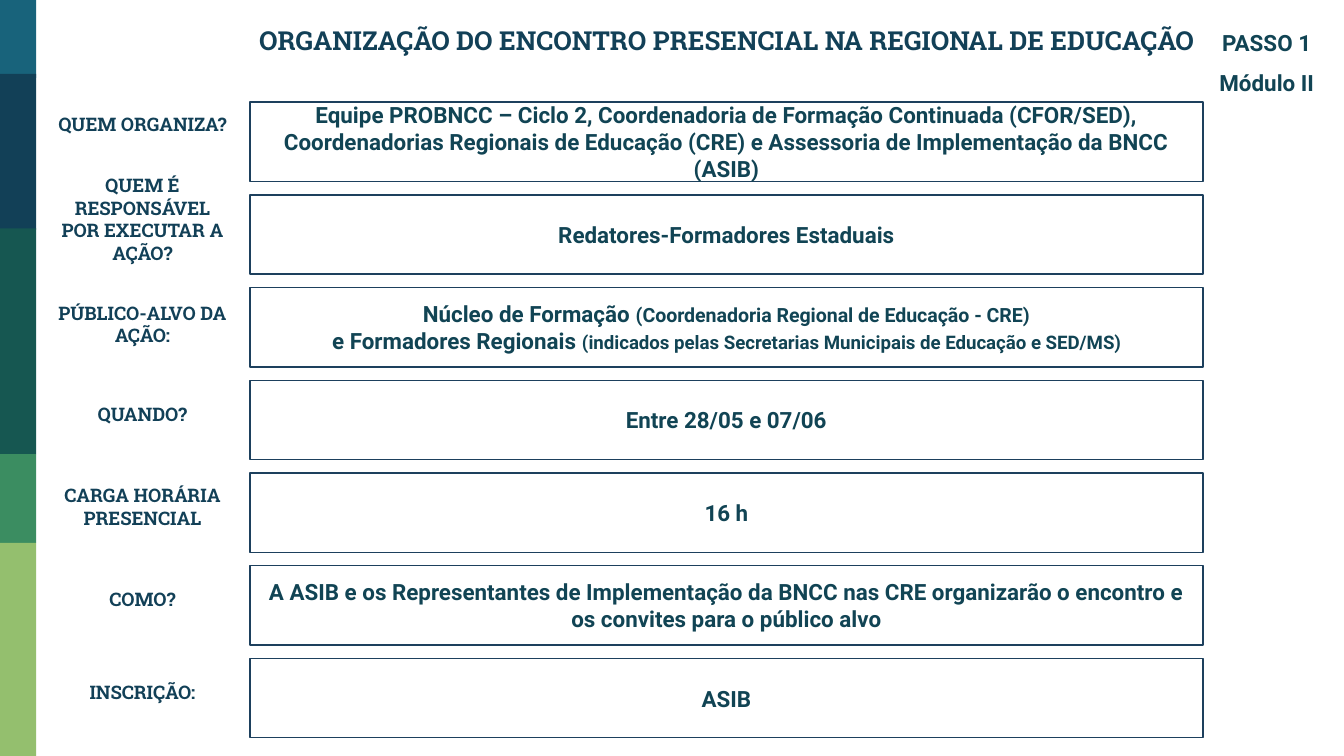
from pptx import Presentation
from pptx.dml.color import RGBColor
from pptx.enum.shapes import MSO_SHAPE
from pptx.enum.text import MSO_ANCHOR, PP_ALIGN
from pptx.util import Inches, Pt

NAVY = RGBColor(0x12, 0x40, 0x57)
TEAL = RGBColor(0x11, 0x44, 0x54)
BORDER = RGBColor(0x1D, 0x40, 0x5D)
BLUE = RGBColor(0x18, 0x63, 0x7B)
PINE = RGBColor(0x16, 0x57, 0x51)
GREEN = RGBColor(0x3B, 0x8D, 0x61)
LIME = RGBColor(0x94, 0xBF, 0x6E)

HEADING_FONT = "Roboto Slab"
BODY_FONT = "Roboto"

SIDEBAR = [
    (0, 0.58, BLUE),
    (0.55, 1.16, NAVY),
    (1.7, 1.68, PINE),
    (3.38, 0.66, GREEN),
    (4.04, 1.59, LIME),
]

FIRST_ROW_TOP = 0.76
ROW_PITCH = 0.69
ROW_HEIGHT = 0.59

ROWS = [
    (0.78, "QUEM ORGANIZA?",
     [[("Equipe PROBNCC – Ciclo 2, Coordenadoria de Formação Continuada (CFOR/SED), "
        "Coordenadorias Regionais de Educação (CRE) e Assessoria de Implementação "
        "da BNCC (ASIB)", 12)]]),
    (1.49, "QUEM É RESPONSÁVEL POR EXECUTAR A AÇÃO?",
     [[("Redatores-Formadores Estaduais", 12)]]),
    (2.27, "PÚBLICO-ALVO DA AÇÃO:",
     [[("Núcleo de Formação ", 12),
       ("(Coordenadoria Regional de Educação - CRE)", 10.5)],
      [("e Formadores Regionais ", 12),
       ("(indicados pelas Secretarias Municipais de Educação e SED/MS)", 10)]]),
    (2.94, "QUANDO?", [[("Entre 28/05 e 07/06", 12)]]),
    (3.63, "CARGA HORÁRIA PRESENCIAL", [[("16 h", 12)]]),
    (4.32, "COMO?",
     [[("A ASIB e os Representantes de Implementação da BNCC nas CRE organizarão "
        "o encontro e os convites para o público alvo", 12)]]),
    (5.01, "INSCRIÇÃO:", [[("ASIB", 12)]]),
]


def write_text(holder, paragraphs, font=BODY_FONT, color=TEAL):
    frame = holder.text_frame
    frame.word_wrap = True
    frame.vertical_anchor = MSO_ANCHOR.MIDDLE
    frame.margin_left = frame.margin_right = Inches(0.1)
    frame.margin_top = frame.margin_bottom = Inches(0.1)
    for index, pieces in enumerate(paragraphs):
        paragraph = frame.add_paragraph() if index else frame.paragraphs[0]
        paragraph.alignment = PP_ALIGN.CENTER
        for text, size in pieces:
            run = paragraph.add_run()
            run.text = text
            run.font.name = font
            run.font.size = Pt(size)
            run.font.bold = True
            run.font.color.rgb = color


def add_label(slide, left, top, width, height, text, size, **text_format):
    label = slide.shapes.add_textbox(
        Inches(left), Inches(top), Inches(width), Inches(height))
    write_text(label, [[(text, size)]], **text_format)


def add_rectangle(slide, left, top, width, height, fill=None, border=None):
    rectangle = slide.shapes.add_shape(
        MSO_SHAPE.RECTANGLE,
        Inches(left), Inches(top), Inches(width), Inches(height))
    rectangle.shadow.inherit = False
    if fill is None:
        rectangle.fill.background()
    else:
        rectangle.fill.solid()
        rectangle.fill.fore_color.rgb = fill
    if border is None:
        rectangle.line.fill.background()
    else:
        rectangle.line.color.rgb = border
        rectangle.line.width = Pt(0.75)
    return rectangle


def main():
    deck = Presentation()
    deck.slide_width = Inches(10)
    deck.slide_height = Inches(5.625)
    slide = deck.slides.add_slide(deck.slide_layouts[6])

    for top, height, color in SIDEBAR:
        add_rectangle(slide, 0, top, 0.27, height, fill=color)

    add_label(slide, 1.59, 0.11, 7.64, 0.38,
              "ORGANIZAÇÃO DO ENCONTRO PRESENCIAL NA REGIONAL DE EDUCAÇÃO",
              14, font=HEADING_FONT, color=NAVY)

    for index, (question_top, question, answer) in enumerate(ROWS):
        add_label(slide, 0.33, question_top, 1.46, 0.28, question, 10,
                  font=HEADING_FONT, color=NAVY)
        answer_box = add_rectangle(
            slide, 1.86, FIRST_ROW_TOP + index * ROW_PITCH, 7.09, ROW_HEIGHT,
            border=BORDER)
        write_text(answer_box, answer)

    for top, text in [(0.11, "PASSO 1"), (0.41, "Módulo II")]:
        add_label(slide, 8.85, top, 1.15, 0.41, text, 12)

    deck.save("out.pptx")


if __name__ == "__main__":
    main()
